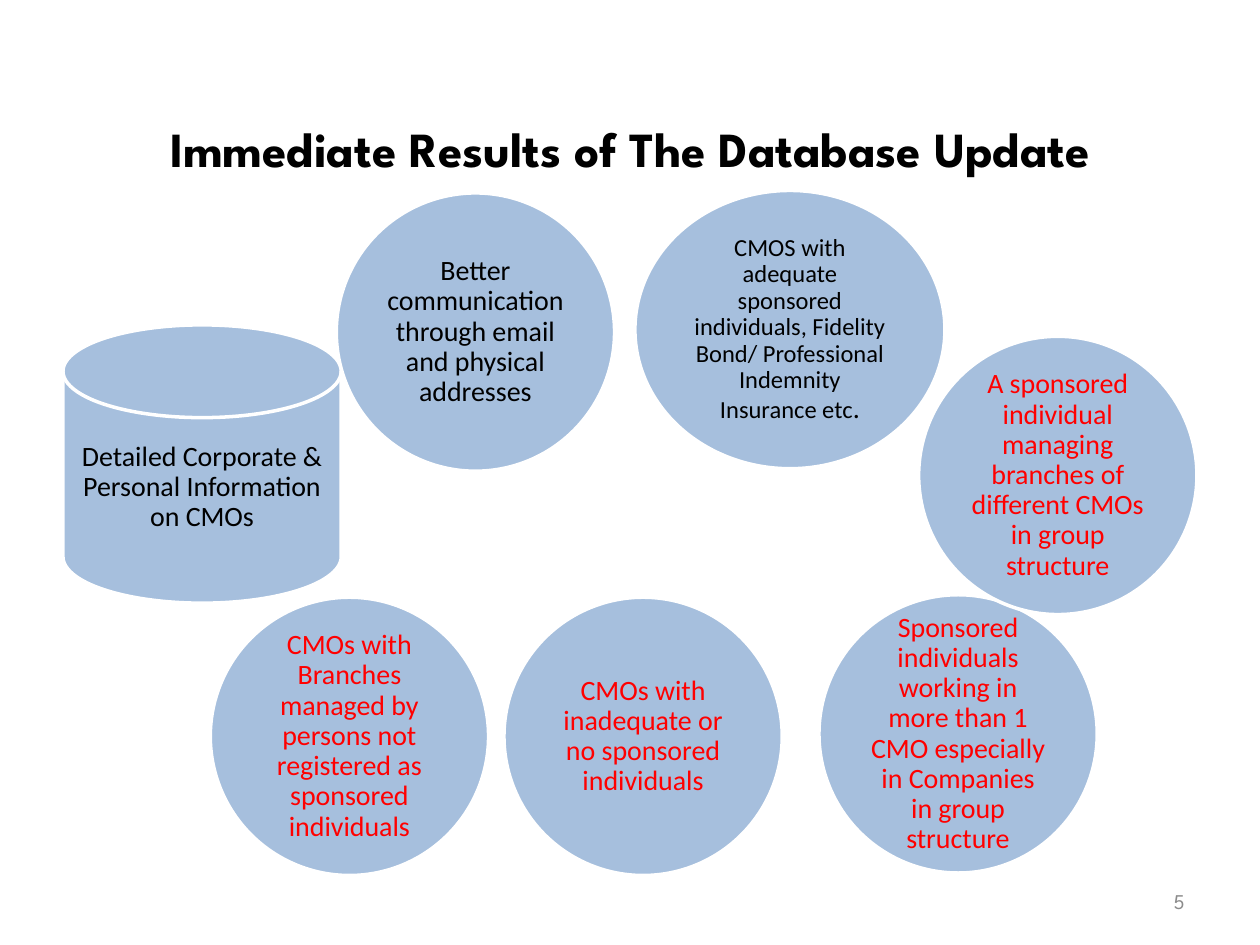
from lxml import etree
from pptx import Presentation
from pptx.dml.color import RGBColor
from pptx.enum.shapes import MSO_SHAPE
from pptx.enum.text import MSO_ANCHOR, PP_ALIGN
from pptx.oxml.ns import qn
from pptx.util import Cm, Pt

DISK, ELLIPSE = MSO_SHAPE.FLOWCHART_MAGNETIC_DISK, MSO_SHAPE.OVAL
CENTER, RIGHT = PP_ALIGN.CENTER, PP_ALIGN.RIGHT
MIDDLE = MSO_ANCHOR.MIDDLE

BLACK = RGBColor(0x00, 0x00, 0x00)
WHITE = RGBColor(0xFF, 0xFF, 0xFF)
RED = RGBColor(0xFF, 0x00, 0x00)
BLUE = RGBColor(0x4F, 0x81, 0xBD)
GREY = RGBColor(0x8C, 0x8C, 0x8C)

HEADING, BODY = "League Spartan", "Calibri"
SIZE = 5.61

# shape, left, top, width (cm), text colour, (text, size) runs; back to front
RESULTS = [
    (DISK, 1.27, 6.55, SIZE, BLACK,
     [("Detailed Corporate & Personal Information on CMOs", 16)]),
    (ELLIPSE, 12.8, 3.84, 6.25, BLACK,
     [("CMOS with adequate sponsored individuals, Fidelity Bond/ "
       "Professional Indemnity Insurance etc", 14), (".", 16)]),
    (ELLIPSE, 6.78, 3.89, SIZE, BLACK,
     [("Better communication through email and physical addresses", 16)]),
    (ELLIPSE, 10.16, 12.04, SIZE, RED,
     [("CMOs with inadequate or no sponsored individuals", 16)]),
    (ELLIPSE, 4.24, 12.04, SIZE, RED,
     [("CMOs with Branches managed by persons not registered as "
       "sponsored individuals", 16)]),
    (ELLIPSE, 16.51, 11.99, SIZE, RED,
     [("Sponsored individuals working in more than 1 CMO especially "
       "in Companies in group structure", 16)]),
    (ELLIPSE, 18.52, 6.78, SIZE, RED,
     [("A sponsored individual managing branches of different CMOs "
       "in group structure", 16)]),
]


def write(tf, runs, font=BODY, color=BLACK, bold=False, align=CENTER,
          spacing=None, inset=None):
    """Fill a text frame with one paragraph of (text, size) runs."""
    tf.word_wrap = True
    tf.vertical_anchor = MIDDLE
    if inset is not None:
        tf.margin_left = tf.margin_right = Cm(inset)
        tf.margin_top = tf.margin_bottom = Cm(inset)
    p = tf.paragraphs[0]
    p.alignment = align
    if spacing:
        p.line_spacing = spacing
    for text, size in runs:
        r = p.add_run()
        r.text = text
        r.font.name = font
        r.font.size = Pt(size)
        r.font.bold = bold
        r.font.color.rgb = color


def add_title(s, text):
    sp = s.shapes.title
    sp.left, sp.top, sp.width, sp.height = Cm(1.27), Cm(2.34), Cm(22.86), Cm(1.27)
    write(sp.text_frame, [(text, 28)], font=HEADING, bold=True)


def add_page_number(s, number):
    sp = s.shapes.add_textbox(Cm(18.21), Cm(17.65), Cm(5.92), Cm(1.02))
    write(sp.text_frame, [(number, 12)], font=HEADING, color=GREY, align=RIGHT)


def add_result(s, kind, left, top, width, color, runs):
    sp = s.shapes.add_shape(kind, Cm(left), Cm(top), Cm(width), Cm(SIZE))
    sp.shadow.inherit = False
    sp.fill.solid()
    sp.fill.fore_color.rgb = BLUE
    fill_color = sp.fill._xPr.find(qn("a:solidFill"))[0]
    etree.SubElement(fill_color, qn("a:alpha"), val="50000")
    sp.line.color.rgb = WHITE
    sp.line.width = Pt(2)
    write(sp.text_frame, runs, color=color, spacing=0.9, inset=0.17)


def main():
    prs = Presentation()
    prs.slide_width, prs.slide_height = Cm(25.4), Cm(19.05)
    s = prs.slides.add_slide(prs.slide_layouts[5])
    add_title(s, "Immediate Results of The Database Update")
    add_page_number(s, "5")
    for result in RESULTS:
        add_result(s, *result)
    prs.save("out.pptx")


if __name__ == "__main__":
    main()
